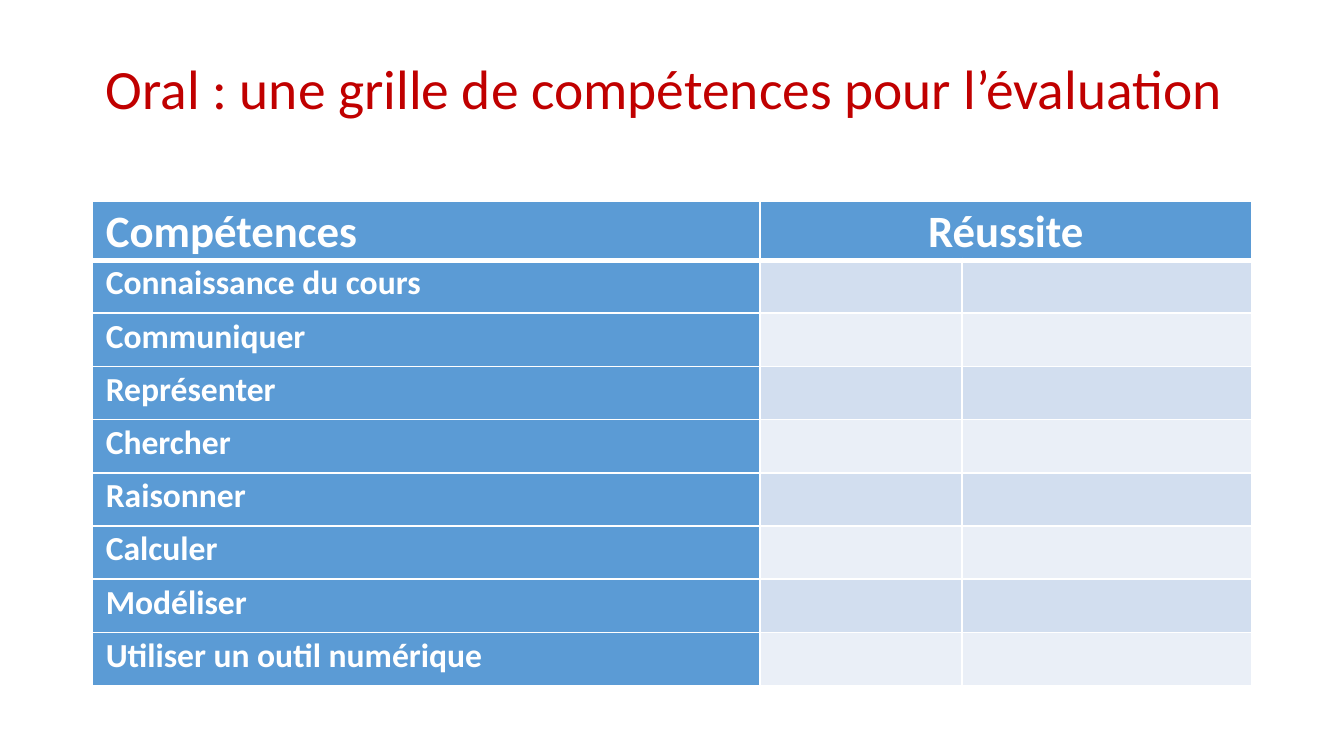
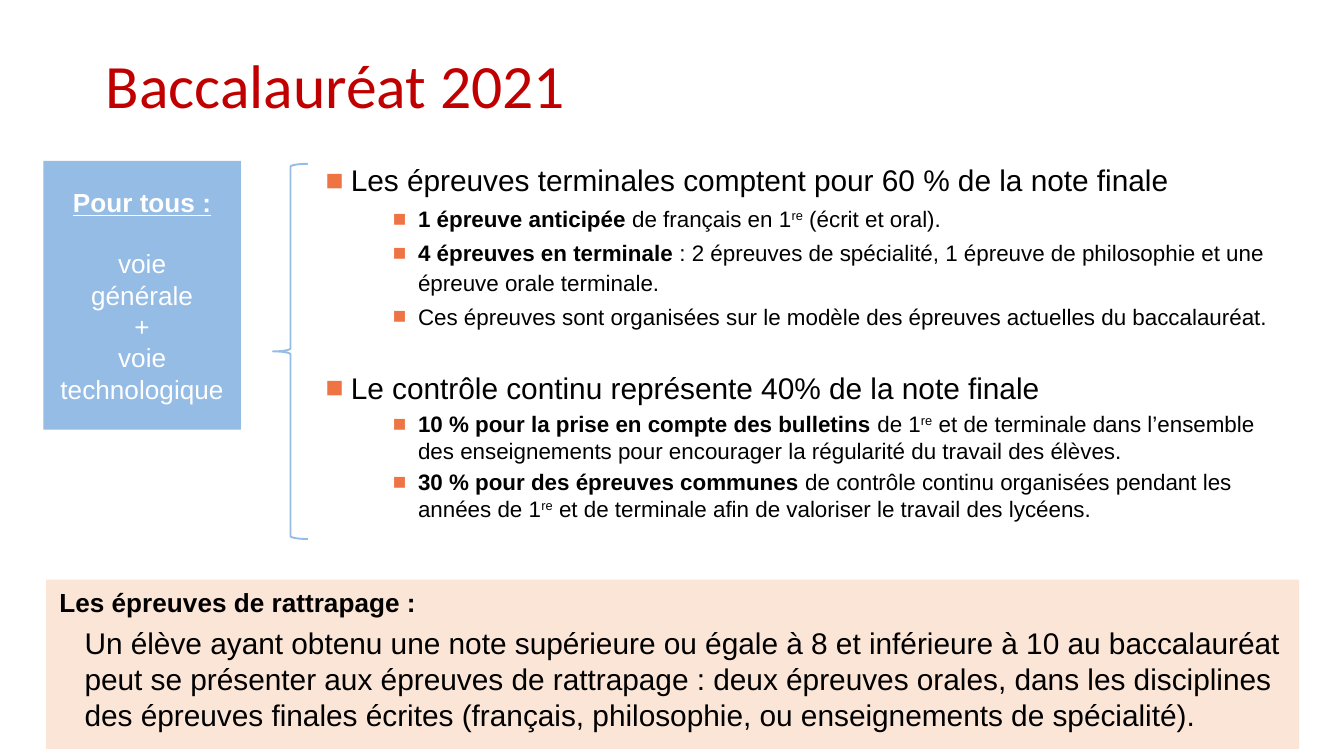
from dataclasses import dataclass

from lxml.etree import SubElement
from pptx import Presentation
from pptx.dml.color import RGBColor
from pptx.enum.shapes import MSO_SHAPE
from pptx.enum.text import MSO_ANCHOR, MSO_AUTO_SIZE, PP_ALIGN
from pptx.oxml.ns import qn
from pptx.util import Emu, Pt

RED = RGBColor(0xC0, 0x00, 0x00)
BLUE = RGBColor(0x5B, 0x9B, 0xD5)
LIGHT_BLUE = RGBColor(0x95, 0xBC, 0xE5)
BANDS = (RGBColor(0xD2, 0xDE, 0xEF), RGBColor(0xEA, 0xEF, 0xF7))
PEACH = RGBColor(0xFB, 0xE5, 0xD6)
ORANGE = RGBColor(0xEE, 0x74, 0x44)
WHITE = RGBColor(0xFF, 0xFF, 0xFF)
BLACK = RGBColor(0x00, 0x00, 0x00)

TITLE_FONT = "Calibri"
TEXT_FONT = "Arial"
TITLE_ONLY, TITLE_AND_BODY = 5, 1


def px(n: int) -> Emu:
    return Emu(n * 9525)


@dataclass(frozen=True)
class Box:
    left: int
    top: int
    width: int
    height: int

    def emu(self) -> tuple:
        return px(self.left), px(self.top), px(self.width), px(self.height)


@dataclass(frozen=True)
class Run:
    text: str
    bold: bool = False
    underline: bool = False
    raised: bool = False


@dataclass(frozen=True)
class Para:
    runs: tuple
    size: int
    align: PP_ALIGN = PP_ALIGN.LEFT
    level: int = 0
    indent: int = 0
    hanging: int = 0
    bullet: bool = False
    spacing: float | None = None
    before: float | None = None
    after: float | None = None


def place(s, box: Box) -> None:
    s.left, s.top, s.width, s.height = box.emu()


def add_run(p, run: Run, size: float, color: RGBColor, font: str) -> None:
    r = p.add_run()
    r.text = run.text
    r.font.name, r.font.size = font, Pt(size)
    r.font.bold, r.font.underline = run.bold, run.underline
    r.font.color.rgb = color
    if run.raised:
        r._r.get_or_add_rPr().set("baseline", "30000")


def add_bullet(p) -> None:
    pPr = p._p.get_or_add_pPr()
    color = SubElement(pPr, qn("a:buClr"))
    SubElement(color, qn("a:srgbClr"), val=str(ORANGE))
    SubElement(pPr, qn("a:buFont"), typeface=TEXT_FONT)
    SubElement(pPr, qn("a:buChar"), char="■")


def write(tf, paras: list[Para], color: RGBColor) -> None:
    tf.word_wrap = True
    for i, para in enumerate(paras):
        p = tf.paragraphs[0] if i == 0 else tf.add_paragraph()
        p.alignment, p.level = para.align, para.level
        if para.spacing:
            p.line_spacing = para.spacing
        if para.before is not None:
            p.space_before = Pt(para.before)
        if para.after is not None:
            p.space_after = Pt(para.after)
        pPr = p._p.get_or_add_pPr()
        pPr.set("marL", str(px(para.indent)))
        pPr.set("indent", str(px(-para.hanging)))
        if para.bullet:
            add_bullet(p)
        for run in para.runs:
            add_run(p, run, para.size, color, TEXT_FONT)


def add_slide(prs, layout: int, title: str, size: float, height: int):
    """Add a slide with the shared red title."""
    slide = prs.slides.add_slide(prs.slide_layouts[layout])
    s = slide.shapes.title
    place(s, Box(66, 29, 828, height))
    tf = s.text_frame
    tf.word_wrap, tf.auto_size = True, MSO_AUTO_SIZE.NONE
    tf.vertical_anchor = MSO_ANCHOR.MIDDLE
    p = tf.paragraphs[0]
    p.alignment, p.line_spacing = PP_ALIGN.LEFT, 0.9
    add_run(p, Run(title), size, RED, TITLE_FONT)
    return slide


def add_panel(slide, box: Box, fill: RGBColor, anchor: MSO_ANCHOR,
              paras: list[Para], color: RGBColor) -> None:
    """Add a filled rectangle holding text."""
    s = slide.shapes.add_shape(MSO_SHAPE.RECTANGLE, *box.emu())
    s.shadow.inherit = False
    s.fill.solid()
    s.fill.fore_color.rgb = fill
    s.line.fill.background()
    s.text_frame.vertical_anchor = anchor
    write(s.text_frame, paras, color)


def style_cell(cell, fill: RGBColor, top: int, bottom: int) -> None:
    """Set fill, margins and white borders; top and bottom are in points."""
    cell.margin_top = cell.margin_bottom = 0
    tcPr = cell._tc.get_or_add_tcPr()
    for side, width in (("L", 1), ("R", 1), ("T", top), ("B", bottom)):
        ln = SubElement(tcPr, qn(f"a:ln{side}"), w=str(Pt(width)))
        SubElement(SubElement(ln, qn("a:solidFill")), qn("a:srgbClr"), val=str(WHITE))
    cell.fill.solid()
    cell.fill.fore_color.rgb = fill


def write_cell(cell, text: str, size: int, align: PP_ALIGN = PP_ALIGN.LEFT) -> None:
    p = cell.text_frame.paragraphs[0]
    p.alignment, p.line_spacing = align, 1.07
    add_run(p, Run(text, bold=True), size, WHITE, TITLE_FONT)


def build_skills_grid(prs) -> None:
    slide = add_slide(prs, TITLE_ONLY,
                      "Oral : une grille de compétences pour l’évaluation", 29.7, 73)
    skills = ["Connaissance du cours", "Communiquer", "Représenter", "Chercher",
              "Raisonner", "Calculer", "Modéliser", "Utiliser un outil numérique"]
    widths = (477, 144, 207)
    row_height = 38
    rows = len(skills) + 1
    box = Box(66, 144, sum(widths), rows * row_height)
    table = slide.shapes.add_table(rows, len(widths), *box.emu()).table
    for column, width in zip(table.columns, widths):
        column.width = px(width)
    for i in range(rows):
        table.rows[i].height = px(row_height)
        for j in range(len(widths)):
            fill = BLUE if i == 0 or j == 0 else BANDS[(i - 1) % 2]
            style_cell(table.cell(i, j), fill, 3 if i == 1 else 1, 3 if i == 0 else 1)
    table.cell(0, 1).merge(table.cell(0, 2))
    write_cell(table.cell(0, 0), "Compétences", 24)
    write_cell(table.cell(0, 1), "Réussite", 24, PP_ALIGN.CENTER)
    for i, skill in enumerate(skills, start=1):
        write_cell(table.cell(i, 0), skill, 18)


def heading(text: str, before: float | None = None) -> Para:
    return Para((Run(text),), 16, indent=18, hanging=18, bullet=True, before=before)


def detail(*runs: Run, spacing: float | None = None) -> Para:
    return Para(runs, 12, level=1, indent=66, hanging=18, bullet=True, spacing=spacing)


def build_exam(prs) -> None:
    slide = add_slide(prs, TITLE_AND_BODY, "Baccalauréat 2021", 33, 69)

    def centred(text: str) -> Para:
        return Para((Run(text),), 14, PP_ALIGN.CENTER)

    add_panel(slide, Box(31, 115, 141, 192), LIGHT_BLUE, MSO_ANCHOR.MIDDLE, [
        Para((Run("Pour tous :", bold=True, underline=True),), 14,
             PP_ALIGN.CENTER, after=16),
        *map(centred, ("voie", "générale", "+", "voie technologique")),
    ], WHITE)

    brace = slide.shapes.add_shape(MSO_SHAPE.LEFT_BRACE, *Box(195, 117, 25, 268).emu())
    brace.shadow.inherit = False
    brace.fill.background()
    brace.line.color.rgb = LIGHT_BLUE
    brace.line.width = Pt(1)

    body = slide.placeholders[1]
    place(body, Box(223, 111, 703, 274))
    body.text_frame.auto_size = MSO_AUTO_SIZE.NONE
    re = Run("re", raised=True)
    write(body.text_frame, [
        heading("Les épreuves terminales comptent pour 60 % de la note finale"),
        detail(Run("1 épreuve anticipée ", bold=True), Run("de français en 1"), re,
               Run(" (écrit et oral)."), spacing=1.1),
        detail(Run("4 épreuves en terminale", bold=True),
               Run(" : 2 épreuves de spécialité, 1 épreuve de philosophie et une "
                   "épreuve orale terminale."), spacing=1.1),
        detail(Run("Ces épreuves sont organisées sur le modèle des épreuves "
                   "actuelles du baccalauréat."), spacing=1.1),
        heading("Le contrôle continu représente 40% de la note finale", before=21.5),
        detail(Run("10 % pour la prise en compte des bulletins ", bold=True),
               Run("de 1"), re,
               Run(" et de terminale dans l’ensemble des enseignements pour "
                   "encourager la régularité du travail des élèves.")),
        detail(Run("30 % pour des épreuves communes ", bold=True),
               Run("de contrôle continu organisées pendant les années de 1"), re,
               Run(" et de terminale afin de valoriser le travail des lycéens.")),
    ], BLACK)

    add_panel(slide, Box(33, 414, 895, 121), PEACH, MSO_ANCHOR.TOP, [
        Para((Run("Les épreuves de rattrapage :", bold=True),), 14, before=3),
        Para((Run("Un élève ayant obtenu une note supérieure ou égale à 8 et "
                  "inférieure à 10 au baccalauréat peut se présenter aux épreuves "
                  "de rattrapage : deux épreuves orales, dans les disciplines des "
                  "épreuves finales écrites (français, philosophie, ou "
                  "enseignements de spécialité)."),), 16, level=1, indent=18, before=4),
    ], BLACK)


def main() -> None:
    prs = Presentation()
    prs.slide_width, prs.slide_height = px(960), px(540)
    build_skills_grid(prs)
    build_exam(prs)
    prs.save("out.pptx")


if __name__ == "__main__":
    main()
